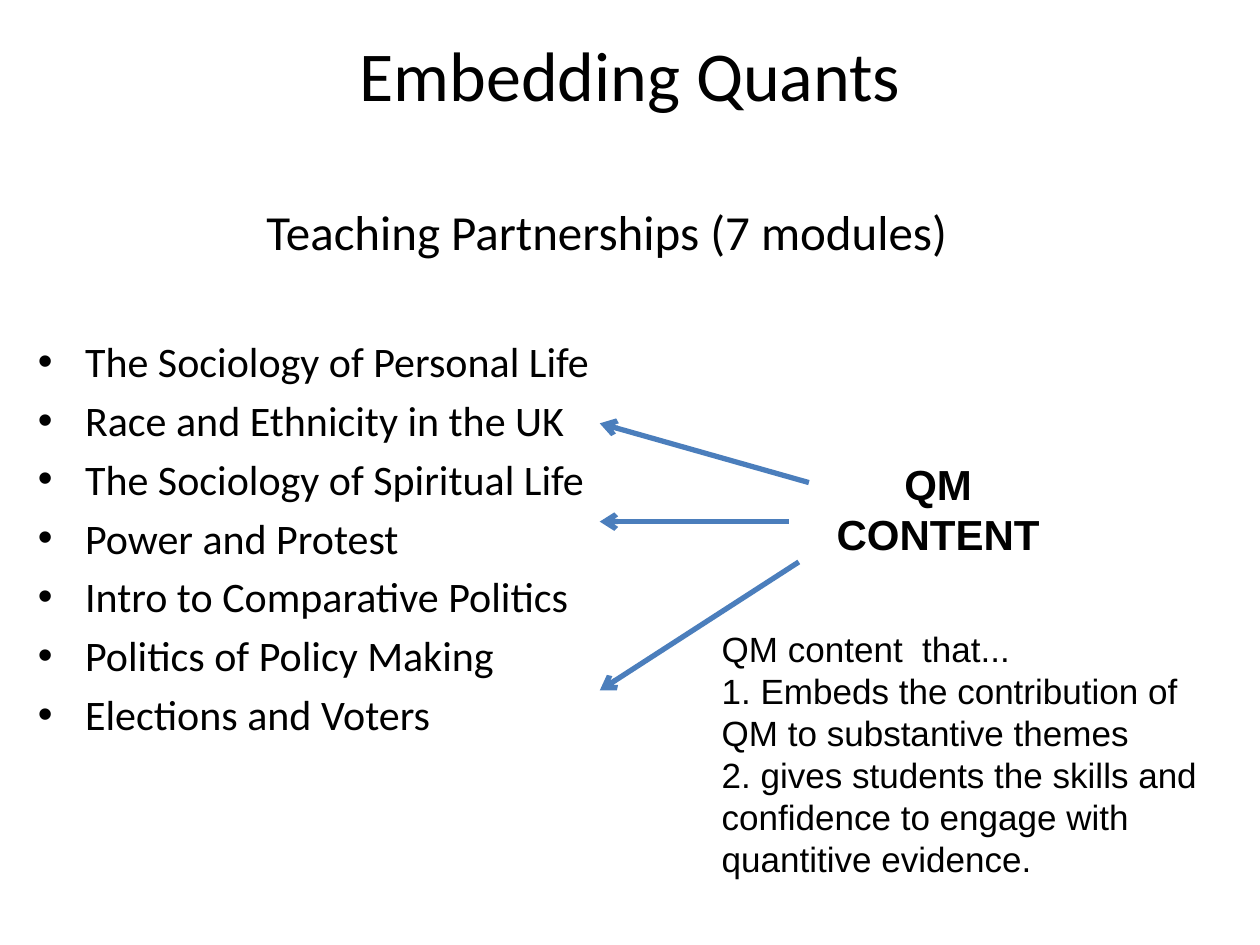
from lxml.etree import SubElement
from pptx import Presentation
from pptx.dml.color import RGBColor
from pptx.enum.shapes import MSO_CONNECTOR
from pptx.enum.text import MSO_ANCHOR, MSO_AUTO_SIZE, PP_ALIGN
from pptx.oxml.ns import qn
from pptx.util import Inches, Pt

BLACK = RGBColor(0x00, 0x00, 0x00)
BLUE = RGBColor(0x4B, 0x7E, 0xBC)

MODULES = [
    "The Sociology of Personal Life",
    "Race and Ethnicity in the UK",
    "The Sociology of Spiritual Life",
    "Power and Protest",
    "Intro to Comparative Politics",
    "Politics of Policy Making",
    "Elections and Voters",
]
QM_AIMS = [
    "QM content  that...",
    "1. Embeds the contribution of QM to substantive themes",
    "2. gives students the skills and confidence to engage with "
    "quantitive evidence.",
]
ARROWS = [
    ((6.42, 3.83), (4.76, 3.36)),
    ((6.26, 4.14), (4.76, 4.14)),
    ((6.34, 4.46), (4.76, 5.48)),
]


class SlideBuilder:
    heading_font = "Calibri"
    text_font = "Arial"

    def __init__(self, prs):
        self.s = prs.slides.add_slide(prs.slide_layouts[1])

    def place(self, sp, left, top, width, height):
        sp.left, sp.top = Inches(left), Inches(top)
        sp.width, sp.height = Inches(width), Inches(height)
        tf = sp.text_frame
        tf.word_wrap = True
        tf.auto_size = MSO_AUTO_SIZE.NONE
        return tf

    def run(self, p, text, size, font, bold=False):
        r = p.add_run()
        r.text = text
        r.font.size = Pt(size)
        r.font.name = font
        r.font.bold = bold
        r.font.color.rgb = BLACK

    def title(self, text, *box):
        tf = self.place(self.s.shapes.title, *box)
        tf.vertical_anchor = MSO_ANCHOR.MIDDLE
        # The deep bottom margin lifts the title above the middle of its box.
        tf.margin_top, tf.margin_bottom = 0, Inches(0.68)
        p = tf.paragraphs[0]
        p.alignment = PP_ALIGN.CENTER
        self.run(p, text, 40, self.heading_font)

    def body(self, heading, items, *box):
        tf = self.place(self.s.placeholders[1], *box)
        p = tf.paragraphs[0]
        p.alignment = PP_ALIGN.CENTER
        SubElement(p._p.get_or_add_pPr(), qn("a:buNone"))
        self.run(p, heading, 28, self.heading_font)
        for i, item in enumerate(items):
            p = tf.add_paragraph()
            if i == 0:
                p.space_before = Pt(43)
            self.run(p, item, 24, self.heading_font)

    def text(self, lines, size, *box, align=PP_ALIGN.LEFT, bold=False):
        sp = self.s.shapes.add_textbox(0, 0, 0, 0)
        tf = self.place(sp, *box)
        for i, line in enumerate(lines):
            p = tf.add_paragraph() if i else tf.paragraphs[0]
            p.alignment = align
            self.run(p, line, size, self.text_font, bold)

    def arrow(self, start, end):
        points = [Inches(v) for v in (*start, *end)]
        line = self.s.shapes.add_connector(MSO_CONNECTOR.STRAIGHT, *points)
        line.line.color.rgb = BLUE
        line.line.width = Pt(3)
        SubElement(line.line._get_or_add_ln(), qn("a:tailEnd"), type="arrow")
        SubElement(line._element.spPr, qn("a:effectLst"))


def main():
    prs = Presentation()
    prs.slide_width, prs.slide_height = Inches(10), Inches(7.5)
    b = SlideBuilder(prs)
    b.title("Embedding Quants", 0.5, 0.3, 9, 1.25)
    b.body("Teaching Partnerships (7 modules)", MODULES, 0.2, 1.55, 9.23, 4.95)
    b.text(QM_AIMS, 20, 5.63, 4.93, 4.17, 2.12)
    for start, end in ARROWS:
        b.arrow(start, end)
    b.text(["QM CONTENT"], 24, 6.42, 3.59, 2.05, 0.91,
           align=PP_ALIGN.CENTER, bold=True)
    prs.save("out.pptx")


if __name__ == "__main__":
    main()
